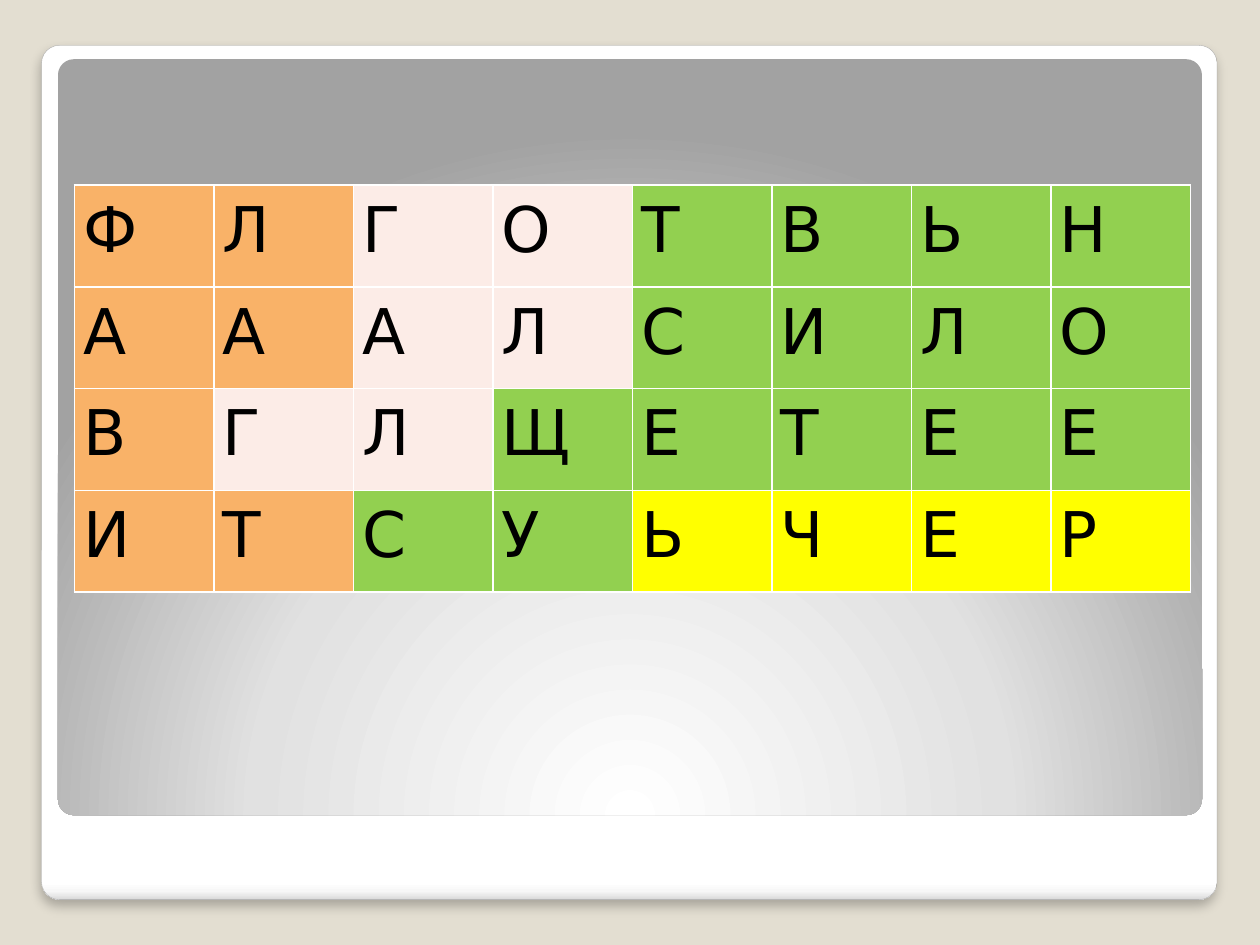
from lxml.etree import SubElement
from pptx import Presentation
from pptx.dml.color import RGBColor
from pptx.enum.shapes import MSO_SHAPE
from pptx.oxml.ns import qn
from pptx.util import Inches, Pt

COLORS = {
    "backdrop": "E3DED1", "frame_line": "A4A4A4", "shadow": "000000",
    "border": "FFFFFF", "text": "000000",
    "orange": "F9B268", "pink": "FCECE7", "green": "92D050", "yellow": "FFFF00",
}
FRAME_STOPS = [(0, "FFFFFF"), (98, "FFFFFF"), (99, "F7F7F7"), (100, "DADADA")]
PANEL_STOPS = [(0, "FFFFFF"), (55, "E1E1E1"), (100, "A2A2A2")]

LETTERS = ["ФЛГОТВЬН", "АААЛСИЛО", "ВГЛЩЕТЕЕ", "ИТСУЬЧЕР"]
# One key per cell: the initial of the cell's colour name
CELL_COLORS = ["ooppgggg", "ooppgggg", "oppggggg", "ooggyyyy"]
COLOR_KEYS = {name[0]: name for name in ("orange", "pink", "green", "yellow")}


def rgb(name):
    return RGBColor.from_string(COLORS[name])


def add_node(parent, tag, **attributes):
    return SubElement(parent, qn(tag), {key: str(value) for key, value in attributes.items()})


def add_color(parent, value, alpha=None):
    color = add_node(parent, "a:srgbClr", val=value)
    if alpha is not None:
        add_node(color, "a:alpha", val=alpha * 1000)


def write_text(frame, text, size=36, font="DejaVu Sans", color="text"):
    run = frame.paragraphs[0].add_run()
    run.text = text
    run.font.size = Pt(size)
    run.font.name = font
    run.font.color.rgb = rgb(color)


class SlideBuilder:
    def __init__(self, slide):
        self.slide = slide
        self.cell_margin = Inches(0.07)
        self.border_width = Pt(1)
        self.corner = 0.021

    def background(self, color):
        fill = self.slide.background.fill
        fill.solid()
        fill.fore_color.rgb = rgb(color)

    def rounded_panel(self, left, top, width, height, stops, center=None):
        """Add a panel with a vertical gradient, or a circular one around center (l, t, r, b in %)."""
        panel = self.slide.shapes.add_shape(
            MSO_SHAPE.ROUNDED_RECTANGLE,
            Inches(left), Inches(top), Inches(width), Inches(height))
        panel.adjustments[0] = self.corner
        panel.shadow.inherit = False
        panel.line.fill.background()
        panel.fill.gradient()
        gradient = panel._element.spPr.find(qn("a:gradFill"))
        for child in list(gradient):
            gradient.remove(child)
        stop_list = add_node(gradient, "a:gsLst")
        for position, color in stops:
            add_color(add_node(stop_list, "a:gs", pos=position * 1000), color)
        if center:
            circle = add_node(gradient, "a:path", path="circle")
            sides = {side: percent * 1000 for side, percent in zip("ltrb", center)}
            add_node(circle, "a:fillToRect", **sides)
        else:
            add_node(gradient, "a:lin", ang=90 * 60000, scaled=0)
        return panel

    def outline(self, panel, color, width):
        panel.line.color.rgb = rgb(color)
        panel.line.width = Pt(width)

    def drop_shadow(self, panel, color, alpha, blur, distance):
        effects = panel._element.spPr.find(qn("a:effectLst"))
        shadow = add_node(effects, "a:outerShdw", blurRad=Pt(blur), dist=Pt(distance),
                          dir=90 * 60000, algn="ctr", rotWithShape=0)
        add_color(shadow, COLORS[color], alpha)

    def cell_borders(self, cell):
        properties = cell._tc.get_or_add_tcPr()
        for side in ("L", "R", "T", "B"):
            line = add_node(properties, f"a:ln{side}", w=self.border_width)
            add_color(add_node(line, "a:solidFill"), COLORS["border"])

    def letter_grid(self, left, top, width, height, letters, colors):
        table = self.slide.shapes.add_table(
            len(letters), len(letters[0]),
            Inches(left), Inches(top), Inches(width), Inches(height)).table
        for r, (row_letters, row_colors) in enumerate(zip(letters, colors)):
            for c, (letter, key) in enumerate(zip(row_letters, row_colors)):
                cell = table.cell(r, c)
                cell.margin_left = cell.margin_right = self.cell_margin
                cell.margin_top = cell.margin_bottom = self.cell_margin
                self.cell_borders(cell)
                cell.fill.solid()
                cell.fill.fore_color.rgb = rgb(COLOR_KEYS[key])
                write_text(cell.text_frame, letter)


def main():
    deck = Presentation()
    deck.slide_width, deck.slide_height = Inches(10), Inches(7.5)
    builder = SlideBuilder(deck.slides.add_slide(deck.slide_layouts[6]))

    builder.background("backdrop")
    frame = builder.rounded_panel(0.33, 0.36, 9.33, 6.78, FRAME_STOPS)
    builder.outline(frame, "frame_line", 0.16)
    builder.drop_shadow(frame, "shadow", alpha=25, blur=6, distance=4)
    builder.rounded_panel(0.46, 0.47, 9.08, 6, PANEL_STOPS, center=(50, 175, 50, -75))
    builder.letter_grid(0.59, 1.47, 8.86, 3.23, LETTERS, CELL_COLORS)

    deck.save("out.pptx")


if __name__ == "__main__":
    main()
